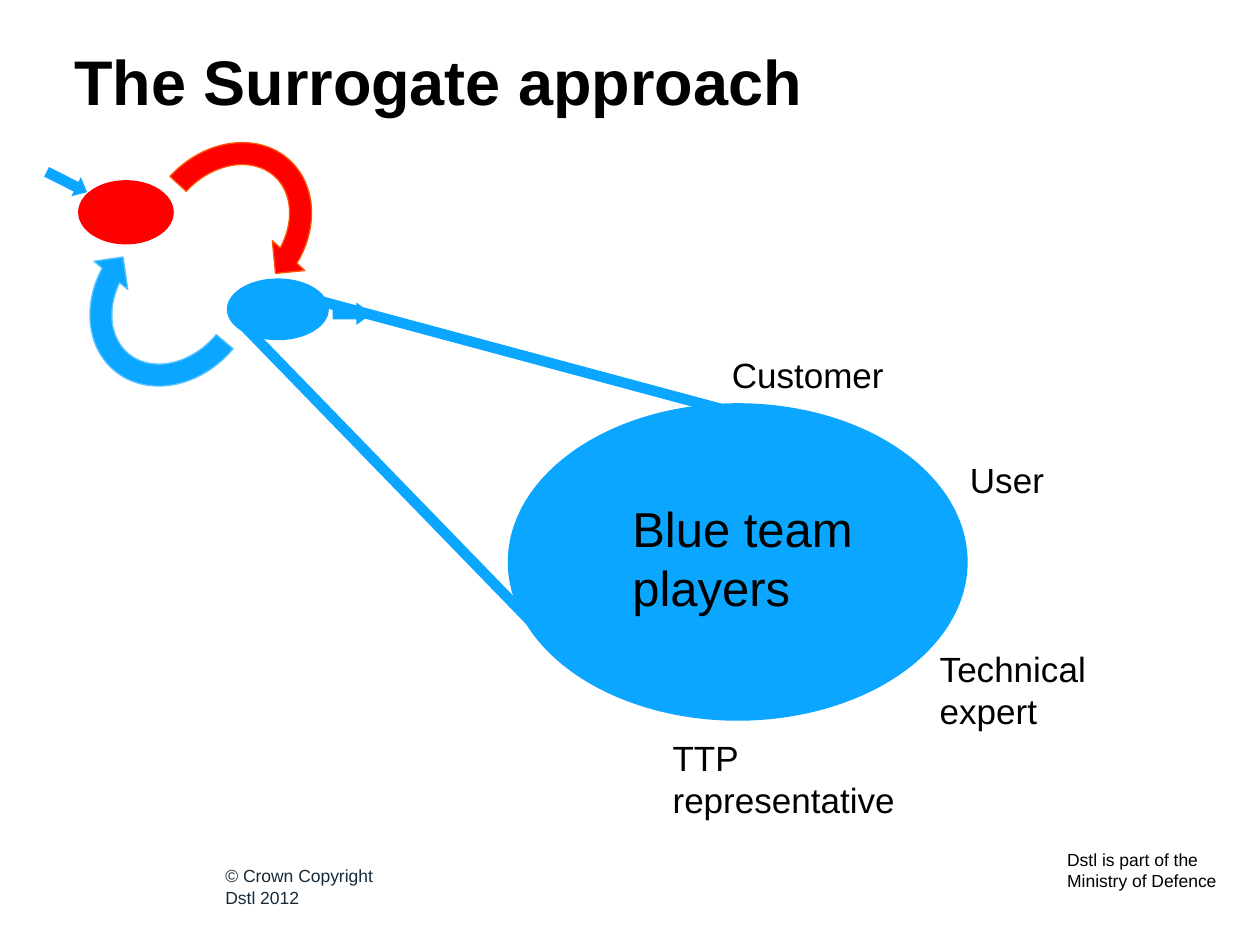
from pptx import Presentation
from pptx.dml.color import RGBColor
from pptx.enum.shapes import MSO_CONNECTOR, MSO_SHAPE as SHAPE
from pptx.enum.text import MSO_ANCHOR, PP_ALIGN
from pptx.oxml.ns import qn
from pptx.util import Inches, Pt
from lxml.etree import SubElement

BLACK, BLUE, RED = "000000", "0BA6FF", "FF0000"


def color(value):
    return RGBColor.from_string(value)


def write(frame, text, size, ink=BLACK, bold=False):
    frame.text = text
    for paragraph in frame.paragraphs:
        paragraph.alignment = PP_ALIGN.LEFT
        font_format = {"name": "Arial", "size": Pt(size), "bold": bold}
        for key, value in font_format.items():
            setattr(paragraph.font, key, value)
        paragraph.font.color.rgb = color(ink)


deck = Presentation()
deck.slide_width, deck.slide_height = Inches(10), Inches(7.5)
slide = deck.slides.add_slide(deck.slide_layouts[5])

title = slide.shapes.title
title_place = {"left": 0.49, "top": 0.29, "width": 8.83, "height": 0.7}
for key, value in title_place.items():
    setattr(title, key, Inches(value))
write(title.text_frame, "The Surrogate approach", 36, bold=True)
title.text_frame.vertical_anchor = MSO_ANCHOR.MIDDLE

loop_and_team = [
    (SHAPE.OVAL, (0.62, 1.43, 0.76, 0.51), 0, RED, None, ()),
    (SHAPE.OVAL, (1.8, 2.21, 0.81, 0.49), 0, BLUE, None, ()),
    (SHAPE.RIGHT_ARROW, (2.64, 2.4, 0.31, 0.18), 0, BLUE, None, (0.5, 0.68)),
    (SHAPE.RIGHT_ARROW, (0.35, 1.36, 0.36, 0.17), 26.7, BLUE, None, (0.5, 0.57)),
    (SHAPE.CIRCULAR_ARROW, (0.68, 1.55, 1.4, 1.65), 219.8, BLUE, "5DC4FF", ()),
    (SHAPE.CIRCULAR_ARROW, (1.1, 0.99, 1.4, 1.65), 42.6, RED, "FF5400", ()),
    (SHAPE.OVAL, (4.03, 3.2, 3.65, 2.52), 0, BLUE, None, ()),
]
for kind, place, turn, fill, outline, adjustments in loop_and_team:
    part = slide.shapes.add_shape(kind, *map(Inches, place))
    part.shadow.inherit = False
    part.rotation = turn
    part.fill.solid()
    part.fill.fore_color.rgb = color(fill)
    if outline:
        part.line.color.rgb = color(outline)
        part.line.width = Pt(0.75)
    else:
        part.line.fill.background()
    for index, value in enumerate(adjustments):
        part.adjustments[index] = value

labels = [
    ("TTP representative", (5.24, 5.8, 1.97, 0.77), 20, BLACK, True, 0.1),
    ("Technical expert", (7.36, 5.09, 1.89, 0.77), 20, BLACK, True, 0.1),
    ("User", (7.6, 3.59, 1.4, 0.44), 20, BLACK, True, 0.1),
    ("Blue team players", (4.92, 3.91, 2.05, 1.04), 28, BLACK, True, 0.1),
    ("Customer", (5.71, 2.76, 1.97, 0.44), 20, BLACK, True, 0.1),
    ("Dstl is part of the Ministry of Defence", (8.47, 6.74, 1.3, 0.58), 10, BLACK, True, 0),
    ("© Crown Copyright\nDstl 2012", (1.69, 6.82, 1.42, 0.44), 10, "162A3A", False, 0.1),
]
for text, place, size, ink, wrap, inset in labels:
    frame = slide.shapes.add_textbox(*map(Inches, place)).text_frame
    frame_format = {
        "word_wrap": wrap,
        "margin_left": Inches(inset),
        "margin_right": Inches(inset),
        "margin_top": Inches(inset / 2),
        "margin_bottom": Inches(inset / 2),
    }
    for key, value in frame_format.items():
        setattr(frame, key, value)
    write(frame, text, size, ink)

zoom_lines = [(2.32, 2.33, 5.85, 3.28), (1.92, 2.57, 4.56, 5.29)]
for ends in zoom_lines:
    zoom = slide.shapes.add_connector(MSO_CONNECTOR.STRAIGHT, *map(Inches, ends))
    zoom.line.color.rgb = color(BLUE)
    zoom.line.width = Pt(6)
    SubElement(zoom._element.spPr, qn("a:effectLst"))

deck.save("out.pptx")
